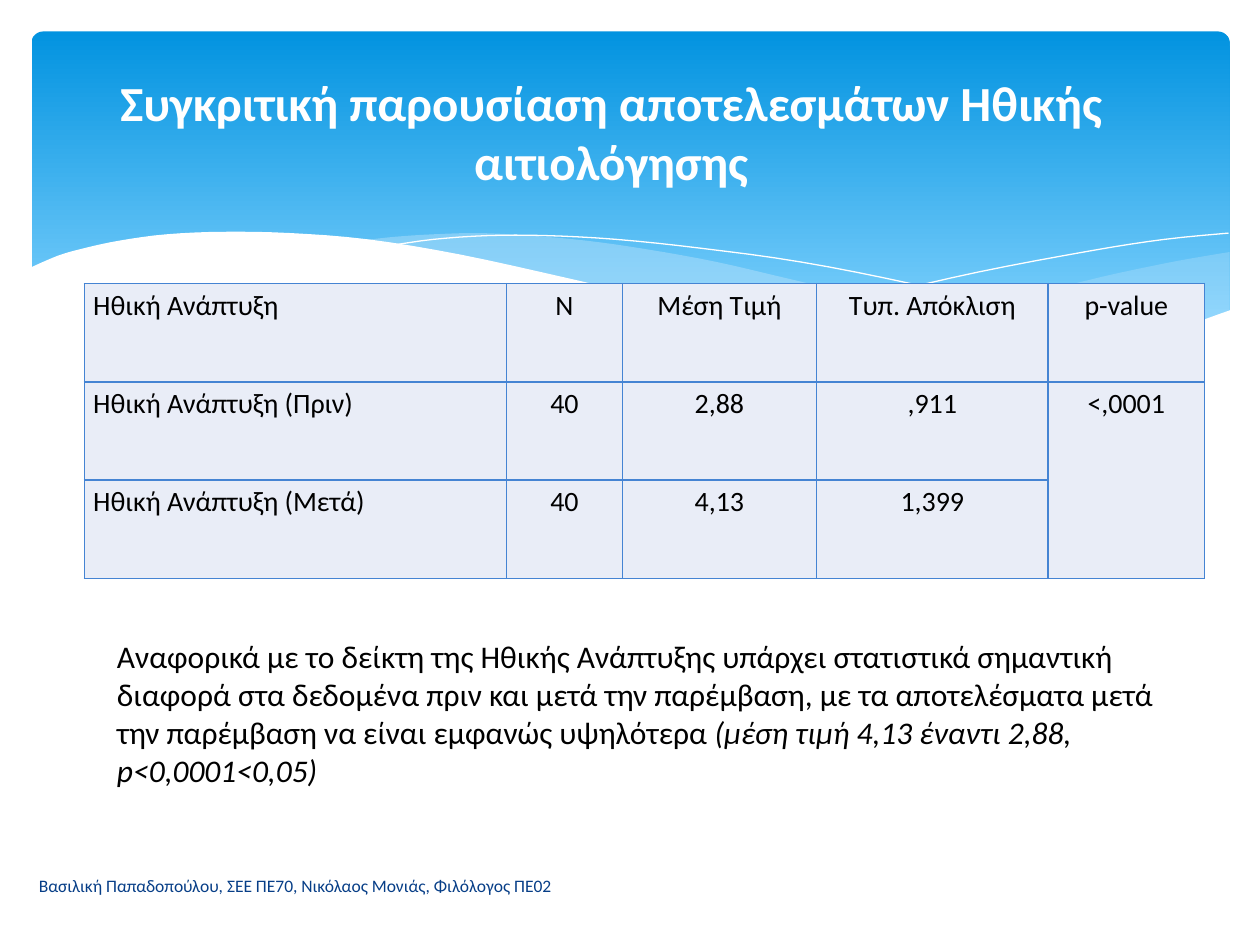
import lxml.etree
import pptx
import pptx.dml.color
import pptx.enum.dml
import pptx.enum.shapes
import pptx.enum.text
import pptx.oxml.ns
import pptx.util

PX = 9144  # EMU in one px, 100 px to the inch
FONT = "Calibri"
COLORS = {
    "sky_top": "0293E0",
    "sky_bottom": "83D3FE",
    "wave": "C6E7FC",
    "white": "FFFFFF",
    "black": "000000",
    "cell": "E9EDF7",
    "border": "4584D3",
    "footer": "073E87",
}
ALIGN = pptx.enum.text.PP_ALIGN
ANCHOR = pptx.enum.text.MSO_ANCHOR

# Wave outlines, in px from the corner of the wave band
RIGHT_WAVE_TOP = [(953, 16), (912, 23), (868, 32), (838, 39), (782, 53), (730, 64), (683, 73), (638, 81)]
RIGHT_WAVE_BOTTOM = [(638, 81), (682, 87), (734, 91), (780, 94), (831, 92), (874, 86), (912, 78), (953, 63)]
MIDDLE_WAVE_TOP = [(870, 89), (814, 81), (752, 70), (683, 56), (606, 38), (546, 24), (491, 14), (442, 7),
                   (397, 3), (357, 1), (321, 2), (290, 4), (263, 7)]
MIDDLE_WAVE_BOTTOM = [(263, 7), (319, 15), (381, 27), (426, 38), (507, 56), (578, 71), (642, 82), (699, 90),
                      (750, 93), (795, 94), (834, 93), (870, 89)]
LEFT_CREST = [(286, 11), (321, 6), (364, 3), (410, 3), (466, 6), (533, 13), (613, 24), (704, 42), (808, 67),
              (884, 88)]
RIGHT_CREST = [(590, 73), (672, 51), (753, 32), (843, 15), (901, 6), (952, 1)]
FRONT_WAVE = [(954, 62), (897, 81), (840, 90), (786, 93), (721, 90), (645, 81), (556, 66), (480, 49), (424, 36),
              (342, 18), (269, 6), (207, 1), (154, 0), (109, 2), (72, 7), (44, 13), (23, 19), (0, 29)]

TABLE_ROWS = [
    ["Ηθική Ανάπτυξη", "N", "Μέση Τιμή", "Τυπ. Απόκλιση", "p-value"],
    ["Ηθική Ανάπτυξη (Πριν)", "40", "2,88", ",911", "<,0001"],
    ["Ηθική Ανάπτυξη (Μετά)", "40", "4,13", "1,399", ""],
]
COLUMN_WIDTHS = [335, 92, 154, 184, 124]


def emu(*lengths):
    return [round(length * PX) for length in lengths]


def color(name):
    return pptx.dml.color.RGBColor.from_string(COLORS[name])


def style(paragraph, size, color_name, align=ALIGN.LEFT, bold=False):
    paragraph.alignment = align
    paragraph.font.name = FONT
    paragraph.font.size = pptx.util.Pt(size)
    paragraph.font.bold = bold
    paragraph.font.color.rgb = color(color_name)


def smooth(points, steps=4):
    """Return points along a Catmull-Rom curve through the given points."""
    padded = [points[0], *points, points[-1]]
    curve = [points[0]]
    for a, b, c, d in zip(padded, padded[1:], padded[2:], padded[3:]):
        for step in range(1, steps + 1):
            t = step / steps
            curve.append(tuple(
                (2 * q + (r - p) * t + (2 * p - 5 * q + 4 * r - s) * t ** 2 + (3 * q - p - 3 * r + s) * t ** 3) / 2
                for p, q, r, s in zip(a, b, c, d)))
    return curve


def add_outline(slide, box, points, closed):
    left, top = box[:2]
    vertices = [emu(left + x, top + y) for x, y in points]
    builder = slide.shapes.build_freeform(*vertices[0])
    builder.add_line_segments(vertices[1:], close=closed)
    shape = builder.convert_to_shape()
    shape.shadow.inherit = False
    return shape


def add_wave(slide, box, points, color_name, opacity=100):
    shape = add_outline(slide, box, points, closed=True)
    shape.line.fill.background()
    shape.fill.solid()
    shape.fill.fore_color.rgb = color(color_name)
    if opacity < 100:
        fill_color = shape.fill._xPr.find(".//" + pptx.oxml.ns.qn("a:srgbClr"))
        lxml.etree.SubElement(fill_color, pptx.oxml.ns.qn("a:alpha"), val=str(opacity * 1000))


def add_crest(slide, box, points):
    shape = add_outline(slide, box, smooth(points), closed=False)
    shape.fill.background()
    shape.line.color.rgb = color("white")
    shape.line.width = pptx.util.Pt(0)


def add_sky(slide, box):
    sky = slide.shapes.add_shape(pptx.enum.shapes.MSO_SHAPE.ROUNDED_RECTANGLE, *emu(*box))
    sky.adjustments[0] = 0.034
    sky.shadow.inherit = False
    sky.line.fill.background()
    sky.fill.gradient()
    sky.fill.gradient_angle = 270
    for stop, position, name in zip(sky.fill.gradient_stops, (0, 0.9), ("sky_top", "sky_bottom")):
        stop.position = position
        stop.color.rgb = color(name)


def add_waves(slide, box):
    width, height = box[2:]
    add_wave(slide, box, smooth(RIGHT_WAVE_TOP) + smooth(RIGHT_WAVE_BOTTOM), "wave", 29)
    add_wave(slide, box, smooth(MIDDLE_WAVE_TOP) + smooth(MIDDLE_WAVE_BOTTOM), "wave", 40)
    add_crest(slide, box, LEFT_CREST)
    add_crest(slide, box, RIGHT_CREST)
    add_wave(slide, box, smooth(FRONT_WAVE) + [(0, height), (width, height)], "white")


def add_text(slide, box, anchor=ANCHOR.TOP):
    """Add a wrapping text box and return its first paragraph."""
    frame = slide.shapes.add_textbox(*emu(*box)).text_frame
    frame.word_wrap = True
    frame.vertical_anchor = anchor
    return frame.paragraphs[0]


def add_title(slide, box):
    paragraph = add_text(slide, box, ANCHOR.MIDDLE)
    paragraph.text = "Συγκριτική παρουσίαση αποτελεσμάτων Ηθικής αιτιολόγησης"
    style(paragraph, 28, "white", ALIGN.CENTER, bold=True)


def add_conclusion(slide, box):
    paragraph = add_text(slide, box)
    paragraph.add_run().text = (
        "Αναφορικά με το δείκτη της Ηθικής Ανάπτυξης υπάρχει στατιστικά σημαντική διαφορά στα δεδομένα "
        "πριν και μετά την παρέμβαση, με τα αποτελέσματα μετά την παρέμβαση να είναι εμφανώς υψηλότερα ")
    statistics = paragraph.add_run()
    statistics.text = "(μέση τιμή 4,13 έναντι 2,88, p<0,0001<0,05)"
    statistics.font.italic = True
    style(paragraph, 18, "black")


def add_footer(slide, box):
    paragraph = add_text(slide, box, ANCHOR.MIDDLE)
    paragraph.text = "Βασιλική Παπαδοπούλου, ΣΕΕ ΠΕ70, Νικόλαος Μονιάς, Φιλόλογος ΠΕ02"
    style(paragraph, 10, "footer")


def set_borders(cell):
    properties = cell._tc.get_or_add_tcPr()
    for index, side in enumerate(("a:lnL", "a:lnR", "a:lnT", "a:lnB")):
        line = lxml.etree.Element(pptx.oxml.ns.qn(side), w=str(pptx.util.Pt(1)))
        fill = lxml.etree.SubElement(line, pptx.oxml.ns.qn("a:solidFill"))
        lxml.etree.SubElement(fill, pptx.oxml.ns.qn("a:srgbClr"), val=COLORS["border"])
        properties.insert(index, line)


def add_results_table(slide, box):
    table = slide.shapes.add_table(len(TABLE_ROWS), len(COLUMN_WIDTHS), *emu(*box)).table
    for column, width in zip(table.columns, COLUMN_WIDTHS):
        column.width = width * PX
    for row_index, row in enumerate(TABLE_ROWS):
        for column_index, text in enumerate(row):
            cell = table.cell(row_index, column_index)
            cell.margin_left = cell.margin_right = 7 * PX
            cell.margin_top = cell.margin_bottom = 0
            cell.fill.solid()
            cell.fill.fore_color.rgb = color("cell")
            set_borders(cell)
            paragraph = cell.text_frame.paragraphs[0]
            paragraph.text = text
            paragraph.line_spacing = 1.15
            style(paragraph, 16, "black", ALIGN.CENTER if column_index else ALIGN.JUSTIFY)
    table.cell(1, 4).merge(table.cell(2, 4))


def main():
    presentation = pptx.Presentation()
    presentation.slide_width, presentation.slide_height = emu(1000, 750)
    slide = presentation.slides.add_slide(presentation.slide_layouts[6])
    add_sky(slide, (25, 25, 951, 270))
    add_waves(slide, (23, 184, 954, 145))
    add_results_table(slide, (67, 225, sum(COLUMN_WIDTHS), 234))
    add_footer(slide, (21, 684, 471, 38))
    add_title(slide, (35, 36, 900, 137))
    add_conclusion(slide, (83, 501, 879, 131))
    presentation.save("out.pptx")


if __name__ == "__main__":
    main()
